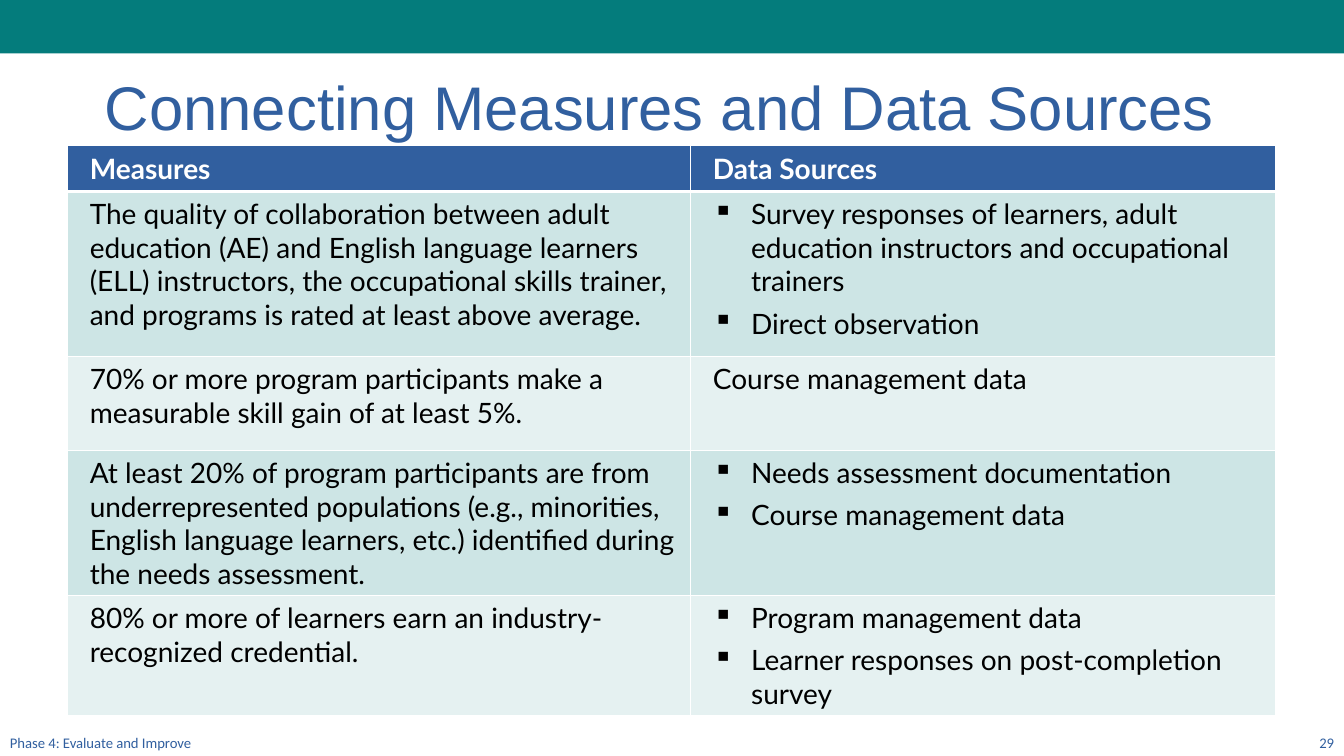
from lxml import etree
from pptx import Presentation
from pptx.dml.color import RGBColor
from pptx.enum.shapes import MSO_SHAPE
from pptx.enum.text import MSO_ANCHOR, PP_ALIGN
from pptx.oxml.ns import qn
from pptx.util import Emu, Pt

RECTANGLE = MSO_SHAPE.RECTANGLE
TOP, MIDDLE, BOTTOM = MSO_ANCHOR.TOP, MSO_ANCHOR.MIDDLE, MSO_ANCHOR.BOTTOM
LEFT, RIGHT = PP_ALIGN.LEFT, PP_ALIGN.RIGHT

EMU_PER_PX = 9144  # 100 px to the inch
SLIDE_WIDTH, SLIDE_HEIGHT = 1333, 750
TEAL, BLUE, PALE_TEAL = "047C7C", "315F9F", "CDE5E5"
WHITE, BLACK = "FFFFFF", "000000"
TINT_ALPHA = 10

TITLE_FONT = {"name": "Arial", "size": Pt(44), "color": BLUE}
FOOTER_FONT = {"name": "Calibri", "size": Pt(10.5), "color": BLUE}
HEADER_FONT = {"name": "Lato", "size": Pt(20), "color": WHITE, "bold": True}
BODY_FONT = {"name": "Lato", "size": Pt(20), "color": BLACK, "bold": False}

COLUMN_WIDTHS = [618, 580]
ROW_HEIGHTS = [46, 164, 93, 144, 119]
HEADINGS = ["Measures", "Data Sources"]
MEASURES = [
    ("The quality of collaboration between adult education (AE) and English "
     "language learners (ELL) instructors, the occupational skills trainer, "
     "and programs is rated at least above average.",
     ["Survey responses of learners, adult education instructors and "
      "occupational trainers", "Direct observation"]),
    ("70% or more program participants make a measurable skill gain of at "
     "least 5%.",
     ["Course management data"]),
    ("At least 20% of program participants are from underrepresented "
     "populations (e.g., minorities, English language learners, etc.) "
     "identified during the needs assessment.",
     ["Needs assessment documentation", "Course management data"]),
    ("80% or more of learners earn an industry-recognized credential.",
     ["Program management data",
      "Learner responses on post-completion survey"]),
]


def px(length):
    return Emu(length * EMU_PER_PX)


def rgb(color):
    return RGBColor.from_string(color)


def write_run(paragraph, text, font_format):
    run = paragraph.add_run()
    run.text = text
    for name, value in font_format.items():
        if name == "color":
            run.font.color.rgb = rgb(value)
        else:
            setattr(run.font, name, value)


def add_text(slide, box, text, font_format, anchor, alignment=LEFT, spacing=1.0):
    frame = slide.shapes.add_textbox(*map(px, box)).text_frame
    frame.word_wrap = True
    frame.vertical_anchor = anchor
    paragraph = frame.paragraphs[0]
    paragraph.alignment = alignment
    paragraph.line_spacing = spacing
    write_run(paragraph, text, font_format)


def add_banner(slide, box):
    banner = slide.shapes.add_shape(RECTANGLE, *map(px, box))
    banner.shadow.inherit = False
    banner.fill.solid()
    banner.fill.fore_color.rgb = rgb(TEAL)
    banner.line.fill.background()


def set_indent(paragraph, margin, indent, bullet=None):
    properties = paragraph._p.get_or_add_pPr()
    properties.set("marL", str(px(margin)))
    properties.set("indent", str(px(indent)))
    if bullet:
        etree.SubElement(properties, qn("a:buChar"), char=bullet)


def set_borders(cell, bottom_width):
    properties = cell._tc.get_or_add_tcPr()
    widths = {"lnL": 1, "lnR": 1, "lnT": 1, "lnB": bottom_width}
    for side, width in widths.items():
        line = etree.SubElement(properties, qn(f"a:{side}"), w=str(Pt(width)))
        fill = etree.SubElement(line, qn("a:solidFill"))
        etree.SubElement(fill, qn("a:srgbClr"), val=WHITE)


def fill_cell(cell, color, alpha=100):
    cell.fill.solid()
    cell.fill.fore_color.rgb = rgb(color)
    if alpha < 100:
        color_element = cell._tc.tcPr.find(".//" + qn("a:solidFill") + "[last()]")
        color_element = cell._tc.tcPr.find(qn("a:solidFill"))[0]
        etree.SubElement(color_element, qn("a:alpha"), val=str(alpha * 1000))


def write_cell(cell, items, font_format):
    """Write one item as plain text, several as a bulleted list."""
    frame = cell.text_frame
    for index, item in enumerate(items):
        paragraph = frame.add_paragraph() if index else frame.paragraphs[0]
        if len(items) > 1:
            paragraph.space_after = Pt(6)
            set_indent(paragraph, 50, -38, "▪")
        else:
            set_indent(paragraph, 12, 0)
        write_run(paragraph, item, font_format)


def add_measures_table(slide, left, top):
    table = slide.shapes.add_table(
        len(ROW_HEIGHTS), len(COLUMN_WIDTHS), px(left), px(top),
        px(sum(COLUMN_WIDTHS)), px(sum(ROW_HEIGHTS))).table
    table.horz_banding = False
    for column, width in zip(table.columns, COLUMN_WIDTHS):
        column.width = px(width)
    for row, height in zip(table.rows, ROW_HEIGHTS):
        row.height = px(height)

    rows = [[[heading] for heading in HEADINGS]]
    rows += [[[measure], sources] for measure, sources in MEASURES]
    for row_index, row in enumerate(rows):
        is_header = row_index == 0
        for column_index, items in enumerate(row):
            cell = table.cell(row_index, column_index)
            set_borders(cell, 3 if is_header else 1)
            cell.vertical_anchor = MIDDLE if is_header else TOP
            if is_header:
                fill_cell(cell, BLUE)
            elif row_index % 2:
                fill_cell(cell, PALE_TEAL)
            else:
                fill_cell(cell, TEAL, TINT_ALPHA)
            write_cell(cell, items, HEADER_FONT if is_header else BODY_FONT)


def add_footer(slide, top, height):
    number_width = 300
    add_text(slide, (SLIDE_WIDTH - number_width, top, number_width, height),
             "29", FOOTER_FONT, BOTTOM, RIGHT)
    add_text(slide, (0, top, 450, height), "Phase 4: Evaluate and Improve",
             FOOTER_FONT, BOTTOM)


def main():
    presentation = Presentation()
    presentation.slide_width = px(SLIDE_WIDTH)
    presentation.slide_height = px(SLIDE_HEIGHT)
    slide = presentation.slides.add_slide(presentation.slide_layouts[6])
    add_banner(slide, (0, 0, SLIDE_WIDTH, 53))
    add_text(slide, (94, 68, 1182, 83), "Connecting Measures and Data Sources",
             TITLE_FONT, MIDDLE, spacing=0.9)
    add_measures_table(slide, 67, 144)
    add_footer(slide, 719, 31)
    presentation.save("out.pptx")


if __name__ == "__main__":
    main()
